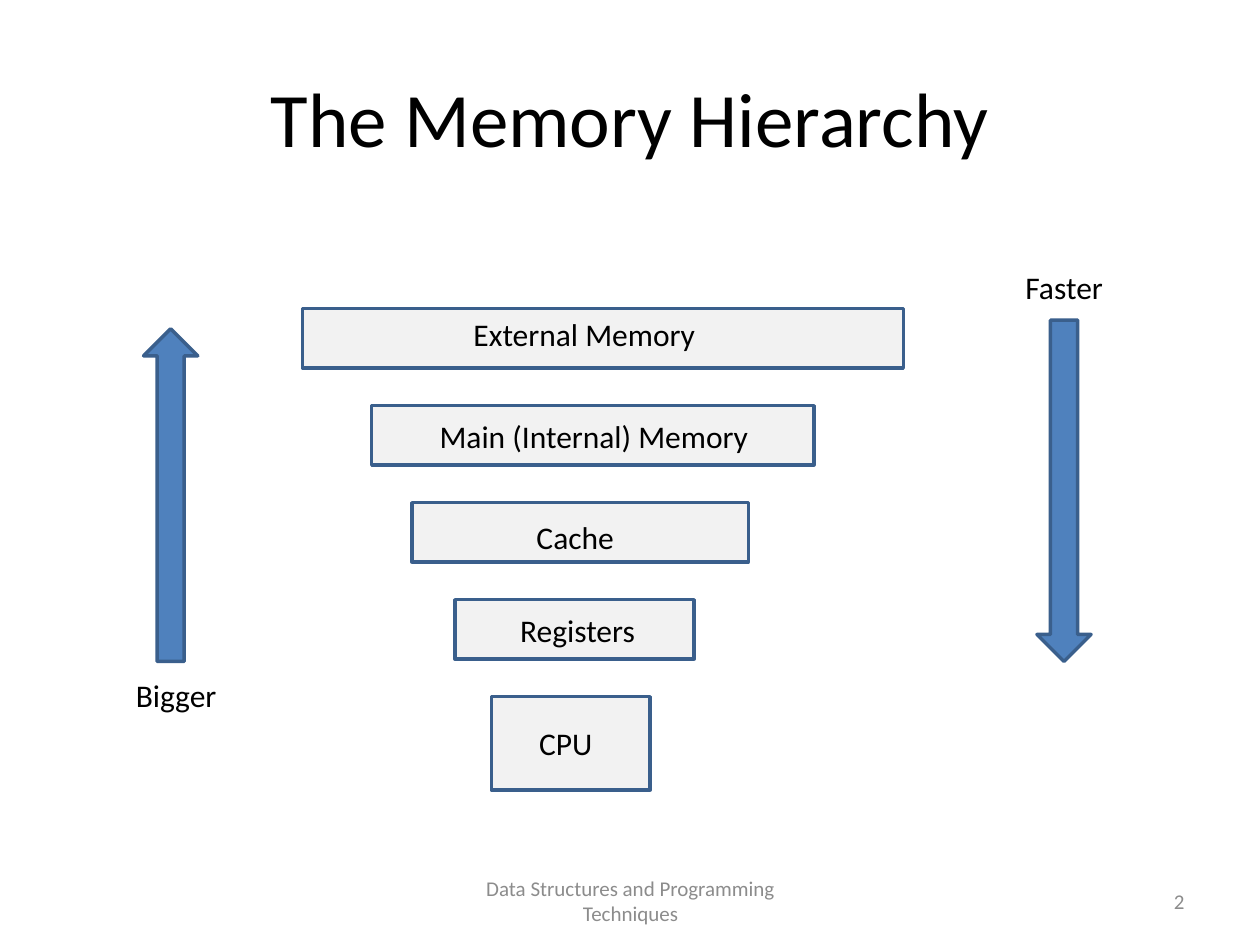
from dataclasses import dataclass

import pptx
import pptx.dml.color
import pptx.enum.shapes
import pptx.enum.text
import pptx.util

COLUMNS, ROWS = 100, 75
CELL = pptx.util.Inches(0.1)
FIRST_LEVEL_ROW, LEVEL_PITCH = 24.5, 7.7
LABEL_ROWS = 4
SHAPES = pptx.enum.shapes.MSO_SHAPE
ALIGN = pptx.enum.text.PP_ALIGN
ANCHOR = pptx.enum.text.MSO_ANCHOR


@dataclass(frozen=True)
class Area:
    column: float
    row: float
    columns: float
    rows: float

    def lengths(self) -> list[int]:
        return [round(n * CELL) for n in (self.column, self.row, self.columns, self.rows)]


@dataclass(frozen=True)
class Level:
    name: str
    column: float
    columns: float
    label_column: float
    label_columns: float
    label_drop: float
    rows: float = 4.7


@dataclass(frozen=True)
class Trend:
    name: str
    arrow: pptx.enum.shapes.MSO_SHAPE
    arrow_area: Area
    label_column: float
    label_row: float


LEVELS = [
    Level("External Memory", 24, 47.7, 36.6, 21.3, 0),
    Level("Main (Internal) Memory", 29.5, 35.1, 33.9, 26.7, 0.4),
    Level("Cache", 32.7, 26.7, 41.6, 11.3, 0.7),
    Level("Registers", 36.1, 19, 40.3, 12.6, 0.4),
    Level("CPU", 39, 12.6, 41.8, 8.3, 1.7, rows=7.4),
]
TRENDS = [
    Trend("Bigger", SHAPES.UP_ARROW, Area(11.4, 26.1, 4.3, 26.4), 9.8, 53.2),
    Trend("Faster", SHAPES.DOWN_ARROW, Area(82.3, 25.4, 4.3, 27.1), 80.4, 20.8),
]


def color(hex_code: str) -> pptx.dml.color.RGBColor:
    return pptx.dml.color.RGBColor.from_string(hex_code)


def add_text(slide, text: str, area: Area, *, size: float = 18, ink: str = "000000",
             align=ALIGN.LEFT, anchor=ANCHOR.TOP) -> None:
    box = slide.shapes.add_textbox(*area.lengths())
    frame = box.text_frame
    frame.word_wrap = True
    frame.vertical_anchor = anchor
    paragraph = frame.paragraphs[0]
    paragraph.alignment = align
    run = paragraph.add_run()
    run.text = text
    run.font.name = "Calibri"
    run.font.size = pptx.util.Pt(size)
    run.font.color.rgb = color(ink)


def add_outlined(slide, preset: pptx.enum.shapes.MSO_SHAPE, area: Area, fill: str) -> None:
    shape = slide.shapes.add_shape(preset, *area.lengths())
    shape.shadow.inherit = False
    shape.fill.solid()
    shape.fill.fore_color.rgb = color(fill)
    shape.line.color.rgb = color("3A5F8C")
    shape.line.width = pptx.util.Pt(2)


def add_level(slide, level: Level, row: float) -> None:
    add_outlined(slide, SHAPES.RECTANGLE,
                 Area(level.column, row, level.columns, level.rows), "F2F2F2")
    add_text(slide, level.name, Area(level.label_column, row + level.label_drop,
                                     level.label_columns, LABEL_ROWS))


def add_trend(slide, trend: Trend) -> None:
    add_outlined(slide, trend.arrow, trend.arrow_area, "4F81BD")
    add_text(slide, trend.name, Area(trend.label_column, trend.label_row, 10.4, LABEL_ROWS))


def main() -> None:
    deck = pptx.Presentation()
    deck.slide_width, deck.slide_height = COLUMNS * CELL, ROWS * CELL
    slide = deck.slides.add_slide(deck.slide_layouts[6])
    add_text(slide, "The Memory Hierarchy", Area(5, 3, 90, 12.5), size=44,
             align=ALIGN.CENTER, anchor=ANCHOR.MIDDLE)
    footer = dict(size=12, ink="8C8C8C", anchor=ANCHOR.MIDDLE)
    add_text(slide, "Data Structures and Programming Techniques",
             Area(34.2, 69.5, 31.7, 4), align=ALIGN.CENTER, **footer)
    add_text(slide, "2", Area(71.7, 69.5, 23.3, 4), align=ALIGN.RIGHT, **footer)
    for index, level in enumerate(LEVELS):
        add_level(slide, level, FIRST_LEVEL_ROW + index * LEVEL_PITCH)
    for trend in TRENDS:
        add_trend(slide, trend)
    deck.save("out.pptx")


if __name__ == "__main__":
    main()
